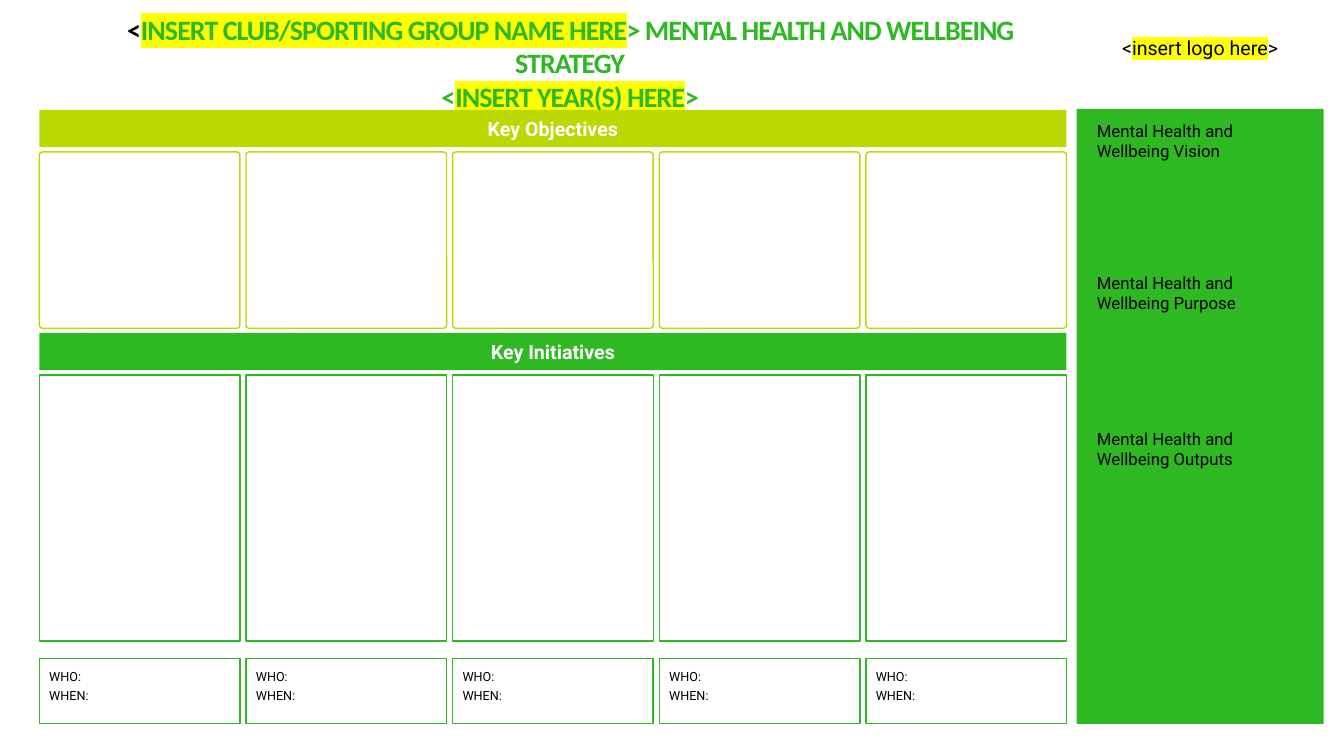
"""Build a one-page mental health and wellbeing strategy template for a club."""
from lxml import etree
from pptx import Presentation
from pptx.dml.color import RGBColor
from pptx.enum.shapes import MSO_SHAPE
from pptx.enum.text import MSO_ANCHOR, MSO_AUTO_SIZE, PP_ALIGN
from pptx.oxml.ns import qn
from pptx.util import Pt

RECTANGLE = MSO_SHAPE.RECTANGLE
ROUNDED = MSO_SHAPE.ROUNDED_RECTANGLE
TOP, MIDDLE = MSO_ANCHOR.TOP, MSO_ANCHOR.MIDDLE
LEFT, CENTER = PP_ALIGN.LEFT, PP_ALIGN.CENTER
NO_AUTOFIT = MSO_AUTO_SIZE.NONE

GREEN = RGBColor(0x2E, 0xB8, 0x21)
LIME = RGBColor(0xBA, 0xD9, 0x03)
YELLOW = RGBColor(0xFF, 0xFF, 0x00)
BLACK = RGBColor(0x00, 0x00, 0x00)
WHITE = RGBColor(0xFF, 0xFF, 0xFF)

GRID_LEFT, GRID_WIDTH = 28.1, 733.7
COLUMN_WIDTH, COLUMN_STEP, COLUMN_COUNT = 143.3, 147.6, 5
SIDE_LEFT, SIDE_WIDTH = 769, 176.4


def add_box(kind, left, top, width, height, fill=None, line=None, corner=0):
    shape = slide.shapes.add_shape(kind, Pt(left), Pt(top), Pt(width), Pt(height))
    shape.shadow.inherit = False
    if kind == ROUNDED:
        shape.adjustments[0] = corner
    if fill is None:
        shape.fill.background()
    else:
        shape.fill.solid()
        shape.fill.fore_color.rgb = fill
    if line is None:
        shape.line.fill.background()
    else:
        shape.line.color.rgb = line
        shape.line.width = Pt(1)
    return shape


def write_text(shape, lines, size, font="Roboto", bold=False, align=LEFT, anchor=TOP,
               insets=(7.2, 3.6, 7.2, 3.6), gaps=(), after=0, spacing=None):
    frame = shape.text_frame
    frame.word_wrap = True
    frame.auto_size = NO_AUTOFIT
    frame.vertical_anchor = anchor
    frame.margin_left, frame.margin_top, frame.margin_right, frame.margin_bottom = map(Pt, insets)
    for index, runs in enumerate(lines):
        paragraph = frame.add_paragraph() if index else frame.paragraphs[0]
        paragraph.alignment = align
        paragraph.space_after = Pt(after)
        if index and gaps:
            paragraph.space_before = Pt(gaps[index - 1])
        for text, color, highlight in runs:
            run = paragraph.add_run()
            run.text = text
            run.font.size = Pt(size)
            run.font.bold = bold
            run.font.color.rgb = color
            properties = run.font._element
            if spacing is not None:
                properties.set("spc", str(spacing))
            if highlight is not None:
                marker = etree.SubElement(properties, qn("a:highlight"))
                etree.SubElement(marker, qn("a:srgbClr")).set("val", str(highlight))
            run.font.name = font


presentation = Presentation()
presentation.slide_width, presentation.slide_height = Pt(960), Pt(540)
slide = presentation.slides.add_slide(presentation.slide_layouts[5])

title = slide.shapes.title
title.left, title.top, title.width, title.height = Pt(45.4), Pt(5), Pt(723.6), Pt(54)
title_lines = [
    [("<", BLACK, None),
     ("INSERT CLUB/SPORTING GROUP NAME HERE", GREEN, YELLOW),
     ("> MENTAL HEALTH AND WELLBEING STRATEGY", GREEN, None)],
    [("<", GREEN, None), ("INSERT YEAR(S) HERE", GREEN, YELLOW), (">", GREEN, None)],
]
write_text(title, title_lines, 20, font="Calibri", bold=True, align=CENTER, spacing=-70)

side_panel = add_box(ROUNDED, SIDE_LEFT, 77.8, SIDE_WIDTH, 439.2, fill=GREEN)
side_lines = [[(f"Mental Health and Wellbeing {topic}", BLACK, None)]
              for topic in ("Vision", "Purpose", "Outputs")]
write_text(side_panel, side_lines, 12, insets=(14.4, 8.6, 14.4, 14.4), gaps=(79.5, 82.5))

for heading, top, color in (("Key Objectives", 78.5, LIME), ("Key Initiatives", 237.8, GREEN)):
    banner = add_box(RECTANGLE, GRID_LEFT, top, GRID_WIDTH, 26.6, fill=color)
    write_text(banner, [[(heading, WHITE, None)]], 14, bold=True, align=CENTER,
               anchor=MIDDLE, insets=(0, 5.8, 0, 5.8))

for column in range(COLUMN_COUNT):
    left = GRID_LEFT + column * COLUMN_STEP
    add_box(ROUNDED, left, 108.5, COLUMN_WIDTH, 126, fill=WHITE, line=LIME, corner=0.019)
    add_box(ROUNDED, left, 268, COLUMN_WIDTH, 190, line=GREEN)
    owner_box = add_box(RECTANGLE, left, 470.5, COLUMN_WIDTH, 46.3, line=GREEN)
    write_text(owner_box, [[("WHO:", BLACK, None)], [("WHEN:", BLACK, None)]], 9,
               insets=(7.2, 7.2, 7.2, 7.2), after=3)

logo_box = slide.shapes.add_textbox(Pt(SIDE_LEFT), Pt(21.8), Pt(SIDE_WIDTH), Pt(51))
logo_line = [("<", BLACK, None), ("insert logo here", BLACK, YELLOW), (">", BLACK, None)]
write_text(logo_box, [logo_line], 14, align=CENTER)

presentation.save("out.pptx")
